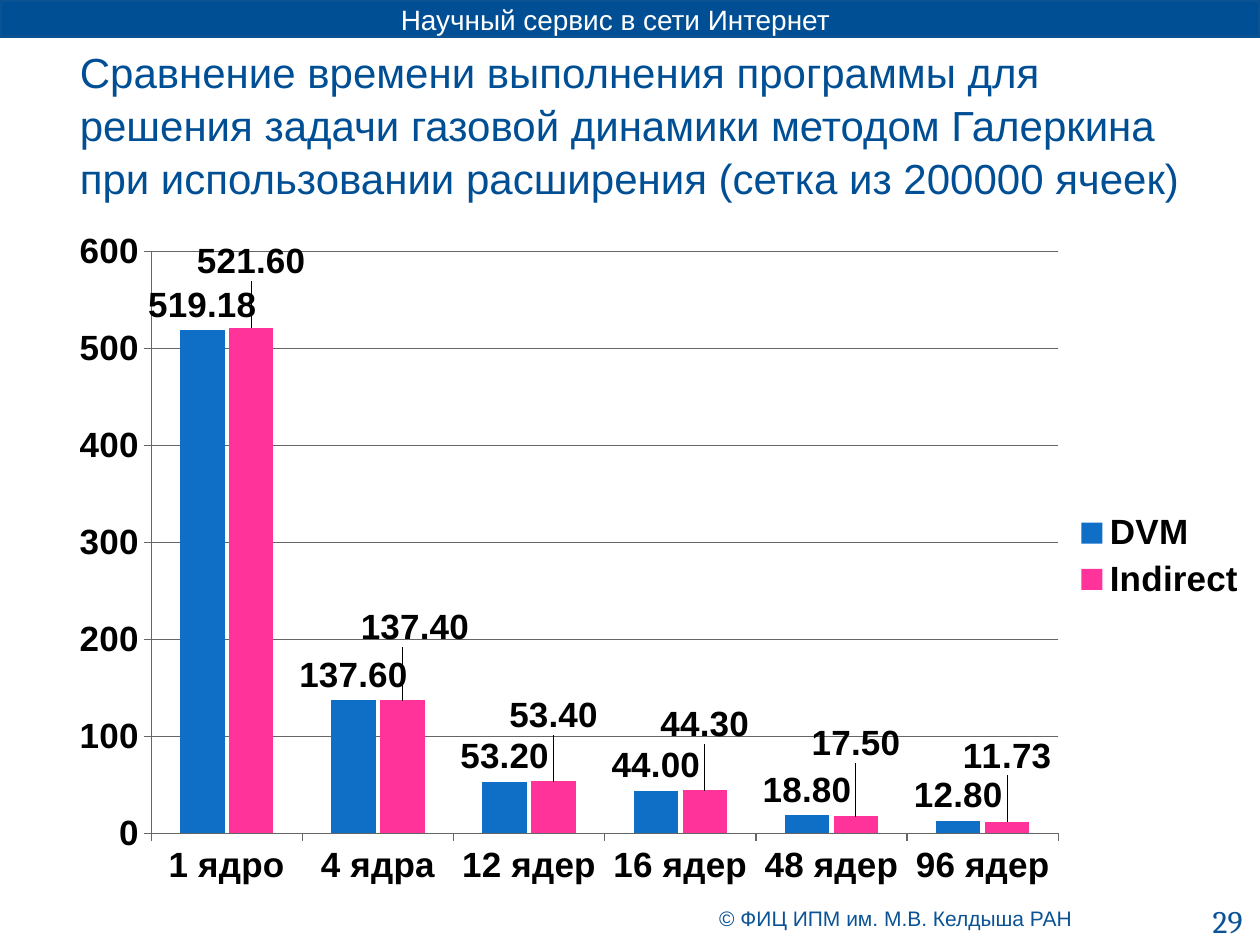
from dataclasses import dataclass

from lxml import etree
from pptx import Presentation
from pptx import util as u
from pptx.chart.data import CategoryChartData
from pptx.dml.color import RGBColor
from pptx.enum import chart as ec, shapes, text
from pptx.oxml import ns


@dataclass(frozen=True)
class Theme:
    navy: str = "004F94"
    edge: str = "0B5292"
    note: str = "0B5394"
    white: str = "FFFFFF"
    black: str = "000000"
    grid: str = "666666"
    blue: str = "0F6FC6"
    pink: str = "FF3399"
    sans: str = "Arial"
    serif: str = "Cambria"
    title: int = 24
    chart: int = 20
    base: int = 10
    page: int = 18
    head: int = 16
    foot: int = 12


T = Theme()

CORES = ["1 ядро", "4 ядра", "12 ядер", "16 ядер", "48 ядер", "96 ядер"]
DVM = [519.18, 137.6, 53.2, 44, 18.8, 12.8]
INDIRECT = [521.6, 137.4, 53.4, 44.3, 17.5, 11.73]
# Label shifts as shares of the chart's width and height
SHIFTS = [(0, -0.06), (0.01, -0.07), (0, -0.06),
          (0, -0.06), (0, -0.07), (0, -0.06)]


def style(font, size, color, face=T.sans, bold=False):
    font.size = u.Pt(size)
    font.name = face
    font.bold = bold
    font.color.rgb = RGBColor.from_string(color)


def box(at):
    return [u.Cm(n) for n in at]


def add_bar(slide, at):
    bar = slide.shapes.add_shape(shapes.MSO_SHAPE.RECTANGLE, *box(at))
    bar.shadow.inherit = False
    bar.fill.solid()
    bar.fill.fore_color.rgb = RGBColor.from_string(T.navy)
    bar.line.color.rgb = RGBColor.from_string(T.edge)
    bar.line.width = u.Pt(2)


def add_text(slide, at, words, size, color, face=T.sans, align="LEFT",
             anchor="TOP", inset=None, space=None):
    frame = slide.shapes.add_textbox(*box(at)).text_frame
    frame.word_wrap = True
    frame.vertical_anchor = text.MSO_ANCHOR[anchor]
    if inset:
        (frame.margin_left, frame.margin_top,
         frame.margin_right, frame.margin_bottom) = box(inset)
    para = frame.paragraphs[0]
    para.alignment = text.PP_ALIGN[align]
    para.line_spacing = space
    run = para.add_run()
    run.text = words
    style(run.font, size, color, face)
    return frame


def node(tag, **attrs):
    item = etree.Element(ns.qn(tag))
    for key, val in attrs.items():
        item.set(key, str(val))
    return item


def layout(**parts):
    outer = node("c:layout")
    inner = node("c:manualLayout")
    outer.append(inner)
    for key, val in parts.items():
        inner.append(node("c:" + key, val=val))
    return outer


def set_axis(axis):
    style(axis.tick_labels.font, T.chart, T.black, bold=True)
    axis.major_tick_mark = ec.XL_TICK_MARK.OUTSIDE
    axis.format.line.color.rgb = RGBColor.from_string(T.grid)


def set_series(series, color, fmt):
    series.format.fill.solid()
    series.format.fill.fore_color.rgb = RGBColor.from_string(color)
    labels = series.data_labels
    labels.show_value = True
    labels.number_format = fmt
    labels.number_format_is_linked = False
    labels.position = ec.XL_LABEL_POSITION.OUTSIDE_END
    style(labels.font, T.chart, T.black, bold=True)


def shift_labels(series, fmt):
    for i in range(len(SHIFTS)):
        label = series.points[i].data_label
        style(label.font, T.chart, T.black, bold=True)
        label.position = ec.XL_LABEL_POSITION.OUTSIDE_END
    marks = series.data_labels._element.findall(ns.qn("c:dLbl"))
    for mark, (x, y) in zip(marks, SHIFTS):
        mark.insert(1, layout(x=x, y=y))
        mark.insert(2, node("c:numFmt", formatCode=fmt, sourceLinked=0))


def add_chart(slide, at):
    data = CategoryChartData(number_format="0")
    data.categories = CORES
    data.add_series("DVM", DVM)
    data.add_series("Indirect", INDIRECT)
    kind = ec.XL_CHART_TYPE.COLUMN_CLUSTERED
    chart = slide.shapes.add_chart(kind, *box(at), data).chart
    chart.has_title = False
    style(chart.font, T.base, T.black, T.serif)

    # Axes and grid
    set_axis(chart.category_axis)
    axis = chart.value_axis
    set_axis(axis)
    axis.minimum_scale, axis.maximum_scale, axis.major_unit = 0, 600, 100
    axis.tick_labels.number_format = "0"
    axis.tick_labels.number_format_is_linked = False
    axis.has_major_gridlines = True
    axis.major_gridlines.format.line.color.rgb = RGBColor.from_string(T.grid)

    # Legend
    chart.has_legend = True
    chart.legend.position = ec.XL_LEGEND_POSITION.RIGHT
    chart.legend.include_in_layout = False
    style(chart.legend.font, T.chart, T.black, bold=True)

    # Columns and their labels
    plot = chart.plots[0]
    plot.gap_width, plot.overlap = 130, -10
    plot.vary_by_categories = False
    first, second = plot.series
    set_series(first, T.blue, "#,##0.00")
    set_series(second, T.pink, "0.00")
    shift_labels(second, "0.00")

    # Plot area
    area = chart._chartSpace.find(".//" + ns.qn("c:plotArea"))
    for old in area.findall(ns.qn("c:layout")):
        area.remove(old)
    area.insert(0, layout(layoutTarget="inner", xMode="edge", yMode="edge",
                          x=0.12, y=0.055, w=0.72, h=0.85))


def main():
    deck = Presentation()
    deck.slide_width, deck.slide_height = u.Cm(25.4), u.Cm(19.05)
    slide = deck.slides.add_slide(deck.slide_layouts[6])

    # Header band
    add_bar(slide, (0, 0, 25.4, 0.74))
    head = add_text(slide, (1.7, -0.08, 21.41, 0.94),
                    "Научный сервис в сети Интернет",
                    T.head, T.white, align="CENTER")
    head.auto_size = text.MSO_AUTO_SIZE.SHAPE_TO_FIT_TEXT

    # Footer and page number
    add_text(slide, (14.5, 18.14, 10.8, 0.74),
             "© ФИЦ ИПМ им. М.В. Келдыша РАН", T.foot, T.note,
             anchor="MIDDLE", inset=(0, 0, 0, 0))
    add_text(slide, (23.19, 18.06, 2.11, 0.94), "29", T.page, T.note,
             face=T.serif, align="RIGHT")

    # Title
    add_text(slide, (1.27, 1.93, 22.86, 0.99),
             "Cравнение времени выполнения программы для решения задачи "
             "газовой динамики методом Галеркина при использовании "
             "расширения (сетка из 200000 ячеек)", T.title, T.navy,
             anchor="MIDDLE", inset=(0.34, 0.13, 0, 0), space=1.05)

    # Run times
    add_chart(slide, (0, 4.32, 25.4, 13.79))
    deck.save("out.pptx")


if __name__ == "__main__":
    main()
